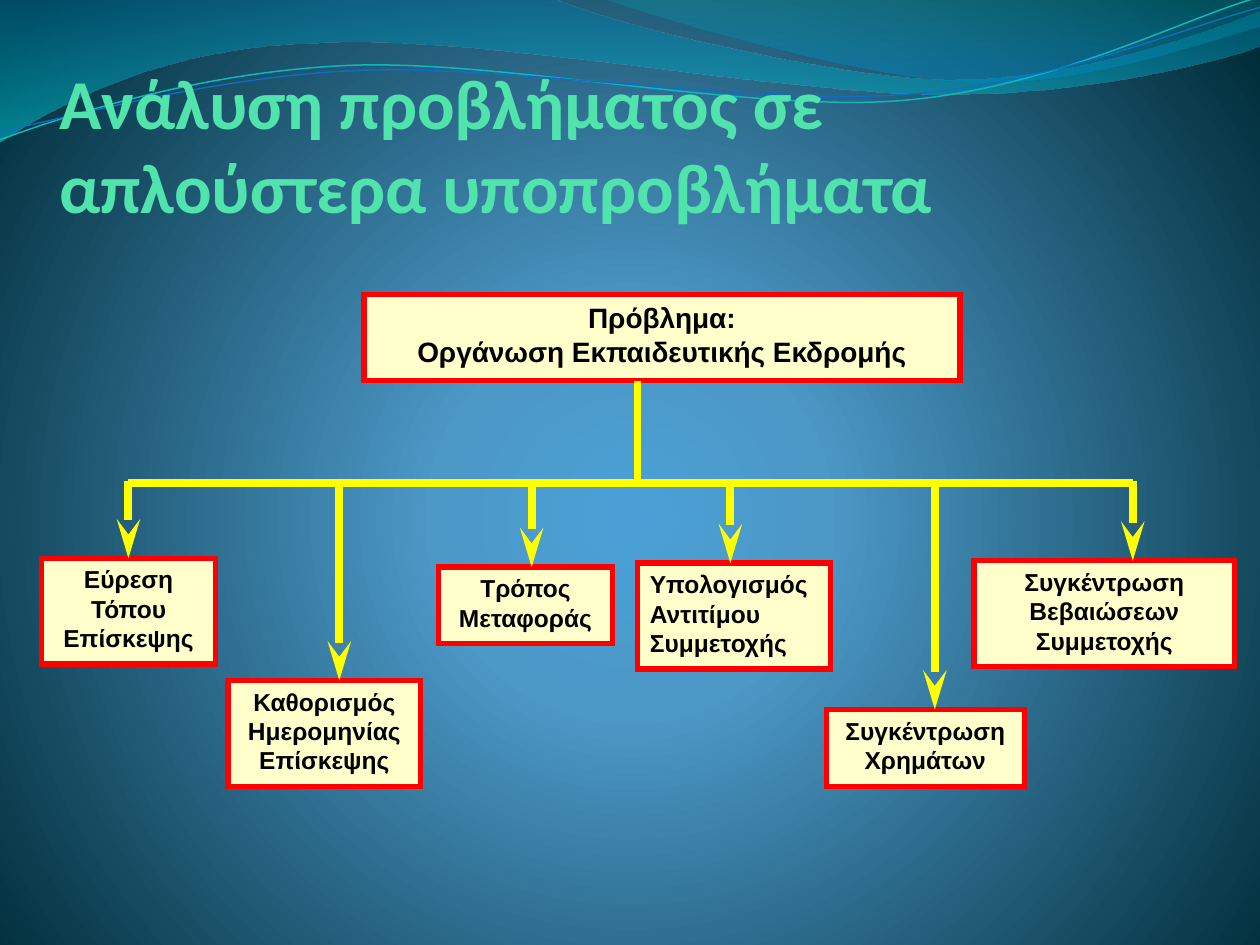
from math import cos, radians, sin

from lxml import etree
from pptx import Presentation
from pptx.dml.color import RGBColor
from pptx.enum.shapes import MSO_CONNECTOR, MSO_SHAPE
from pptx.enum.text import MSO_ANCHOR, MSO_AUTO_SIZE, PP_ALIGN
from pptx.oxml import parse_xml
from pptx.oxml.ns import qn
from pptx.util import Pt

RECT = MSO_SHAPE.RECTANGLE
LINE = MSO_CONNECTOR.STRAIGHT
LEFT, MID = PP_ALIGN.LEFT, PP_ALIGN.CENTER
TOP, BOTTOM = MSO_ANCHOR.TOP, MSO_ANCHOR.BOTTOM
GROW = MSO_AUTO_SIZE.SHAPE_TO_FIT_TEXT

MINT = RGBColor(0x50, 0xE3, 0xAC)
CREAM = RGBColor(0xFF, 0xFF, 0xCC)
RED = RGBColor(0xFF, 0x00, 0x00)
YELLOW = RGBColor(0xFF, 0xFF, 0x00)
BLACK = RGBColor(0x00, 0x00, 0x00)
TEAL = RGBColor(0x0A, 0xB8, 0xBF)
BLUE = RGBColor(0x0F, 0x6F, 0xC6)
SKY = RGBColor(0x4A, 0xA0, 0xD6)
STEEL = RGBColor(0x4C, 0x98, 0xC7)
NIGHT = RGBColor(0x00, 0x2C, 0x38)
DEEP = RGBColor(0x00, 0x74, 0xA1)
AQUA = RGBColor(0x00, 0xC6, 0xCF)
GREEN = RGBColor(0x00, 0xA1, 0xA9)
OCEAN = RGBColor(0x00, 0x8B, 0xBF)

# Gradient stops: position %, colour, opacity %
BACK = [(0, SKY, 100), (25, STEEL, 100), (100, NIGHT, 100)]
RADIAL = ('<a:path path="circle"><a:fillToRect l="10000" t="110000" '
          'r="10000" b="100000"/></a:path>')
DOWN = '<a:lin ang="5400000" scaled="1"/>'

# Outlines: a pair is a straight step, six numbers are a curve
BANDS = [
    ([(0, DEEP, 45), (100, AQUA, 55)],
     [(0, 0), (316.8, -0.7), (342.7, 12.2, 478.1, 45.4, 545.8, 45.4),
      (614.2, 45.4, 689.8, 18.7, 720, 6.5), (720.7, 25.9),
      (707.8, 31.7, 626.4, 54.7, 537.1, 54),
      (447.8, 54, 275, 20.2, 185, 24.5),
      (92.9, 25.9, 33.1, 59.8, -0.7, 81.4)]),
    ([(0, GREEN, 30), (80, OCEAN, 45)],
     [(344.9, -0.7), (366.5, 7.9, 491, 44.6, 553.7, 46.8),
      (616.3, 49.7, 691.9, 23, 720, 15.1), (720, 0)]),
]
WAVES = [
    (TEAL, 0.85,
     [(0, 79.9), (34.6, 67, 113.8, 41, 199.4, 37.4),
      (284.4, 33.8, 427, 64.1, 513.4, 57.6),
      (599.8, 51.1, 675.4, 10.8, 718.6, -1.4)]),
    (BLUE, 0.75,
     [(0, 74.9), (33.8, 69.1, 118.1, 43.9, 203.8, 40.3),
      (290.2, 36.7, 429.8, 60.5, 516.2, 54),
      (601.9, 48.2, 677.5, 15.1, 720, 4.3)]),
]
TILT, HUB = 2.7, (359.6, 42)

TITLE = "Ανάλυση προβλήματος σε απλούστερα υποπροβλήματα"
ROOT = ("Πρόβλημα:\nΟργάνωση Εκπαιδευτικής Εκδρομής", (208, 168.3, 340.6, 49.2))
# Text, box (left, top, width, height), arrow x, alignment
PARTS = [
    ("Εύρεση Τόπου Επίσκεψης", (23.8, 319, 99.4, 60.5), 73.4, MID),
    ("Καθορισμός Ημερομηνίας Επίσκεψης", (130.3, 388.8, 110.2, 60.5), 193.9, MID),
    ("Τρόπος Μεταφοράς", (250.6, 324, 99.4, 43.9), 303.8, MID),
    ("Υπολογισμός Αντιτίμου Συμμετοχής", (364.3, 321.8, 110.2, 60.5), 417.4, LEFT),
    ("Συγκέντρωση Χρημάτων", (472.3, 405.4, 113, 43.9), 534.2, MID),
    ("Συγκέντρωση Βεβαιώσεων Συμμετοχής", (556.6, 320.4, 149, 60.5), 647.3, MID),
]
RAIL, FORK, TRUNK = 275.8, 275, 364.3


def grad(stops, shade):
    marks = ""
    for pos, hue, alpha in stops:
        veil = f'<a:alpha val="{alpha * 1000}"/>' if alpha < 100 else ""
        marks += (f'<a:gs pos="{pos * 1000}"><a:srgbClr val="{hue}">'
                  f'{veil}</a:srgbClr></a:gs>')
    return parse_xml(
        '<a:gradFill xmlns:a="http://schemas.openxmlformats.org/drawingml/2006/main" '
        f'rotWithShape="1"><a:gsLst>{marks}</a:gsLst>{shade}</a:gradFill>')


def set_grad(fill, root, stops, shade):
    fill.gradient()
    old = next(root.iter(qn("a:gradFill")))
    old.getparent().replace(old, grad(stops, shade))


def pairs(step):
    return list(zip(step[::2], step[1::2]))


def turn(step, angle):
    c, s = cos(radians(angle)), sin(radians(angle))
    spots = [(x - HUB[0], y - HUB[1]) for x, y in pairs(step)]
    return sum(((HUB[0] + x * c - y * s, HUB[1] + x * s + y * c)
                for x, y in spots), ())


def add_path(shapes, steps, close):
    ends = [(Pt(x), Pt(y)) for x, y in (step[-2:] for step in steps)]
    pen = shapes.build_freeform(*ends[0])
    pen.add_line_segments(ends[1:], close=close)
    shape = pen.convert_to_shape()
    shape.shadow.inherit = False
    # Bend the straight steps that have control points
    for step, node in zip(steps[1:], list(shape.element.iter(qn("a:lnTo")))):
        if len(step) == 6:
            curve = etree.Element(qn("a:cubicBezTo"))
            for x, y in pairs(step):
                etree.SubElement(curve, qn("a:pt"), x=str(Pt(x) - shape.left),
                                 y=str(Pt(y) - shape.top))
            node.getparent().replace(node, curve)
    return shape


def write(frame, text, font, size, hue, align):
    frame.word_wrap = True
    frame.text = text
    for para in frame.paragraphs:
        para.alignment = align
        for run in para.runs:
            run.font.name = font
            run.font.size = Pt(size)
            run.font.bold = True
            run.font.color.rgb = hue


def add_box(shapes, text, area, size, align):
    box = shapes.add_shape(RECT, *map(Pt, area))
    box.shadow.inherit = False
    box.fill.solid()
    box.fill.fore_color.rgb = CREAM
    box.line.color.rgb = RED
    box.line.width = Pt(3)
    edge = box.element.spPr.find(qn("a:ln"))
    etree.SubElement(edge, qn("a:miter"), lim="800000")
    write(box.text_frame, text, "Arial", size, BLACK, align)
    box.text_frame.vertical_anchor = TOP
    box.text_frame.auto_size = GROW


def add_line(shapes, x1, y1, x2, y2, arrow=False):
    line = shapes.add_connector(LINE, *map(Pt, (x1, y1, x2, y2)))
    line.line.color.rgb = YELLOW
    line.line.width = Pt(4.5)
    props = line.element.spPr
    if arrow:
        etree.SubElement(props.find(qn("a:ln")), qn("a:tailEnd"),
                         type="stealth", w="med", len="lg")
    etree.SubElement(props, qn("a:effectLst"))


def main():
    deck = Presentation()
    deck.slide_width, deck.slide_height = Pt(720), Pt(540)
    slide = deck.slides.add_slide(deck.slide_layouts[6])
    shapes = slide.shapes

    # Background and waves
    set_grad(slide.background.fill, slide.element, BACK, RADIAL)
    for stops, steps in BANDS:
        band = add_path(shapes, steps, True)
        set_grad(band.fill, band.element, stops, DOWN)
        band.line.fill.background()
    for hue, width, steps in WAVES:
        wave = add_path(shapes, [turn(step, TILT) for step in steps], False)
        wave.rotation = -TILT
        wave.fill.background()
        wave.line.color.rgb = hue
        wave.line.width = Pt(width)

    # Title
    head = shapes.add_textbox(*map(Pt, (33.8, 22.6, 612, 107.3))).text_frame
    head.margin_left = head.margin_right = head.margin_top = head.margin_bottom = 0
    head.vertical_anchor = BOTTOM
    write(head, TITLE, "Calibri", 40, MINT, LEFT)

    # Boxes
    text, area = ROOT
    add_box(shapes, text, area, 16, MID)
    for text, box, _, align in PARTS:
        add_box(shapes, text, box, 14, align)

    # Trunk, rail halves and arrows
    add_line(shapes, TRUNK, area[1] + area[3], TRUNK, FORK)
    add_line(shapes, PARTS[0][2], RAIL, TRUNK + 1.5, RAIL)
    add_line(shapes, TRUNK - 4.3, RAIL, PARTS[-1][2], RAIL)
    for _, box, x, _ in PARTS:
        add_line(shapes, x, FORK, x, box[1], arrow=True)

    deck.save("out.pptx")


if __name__ == "__main__":
    main()
